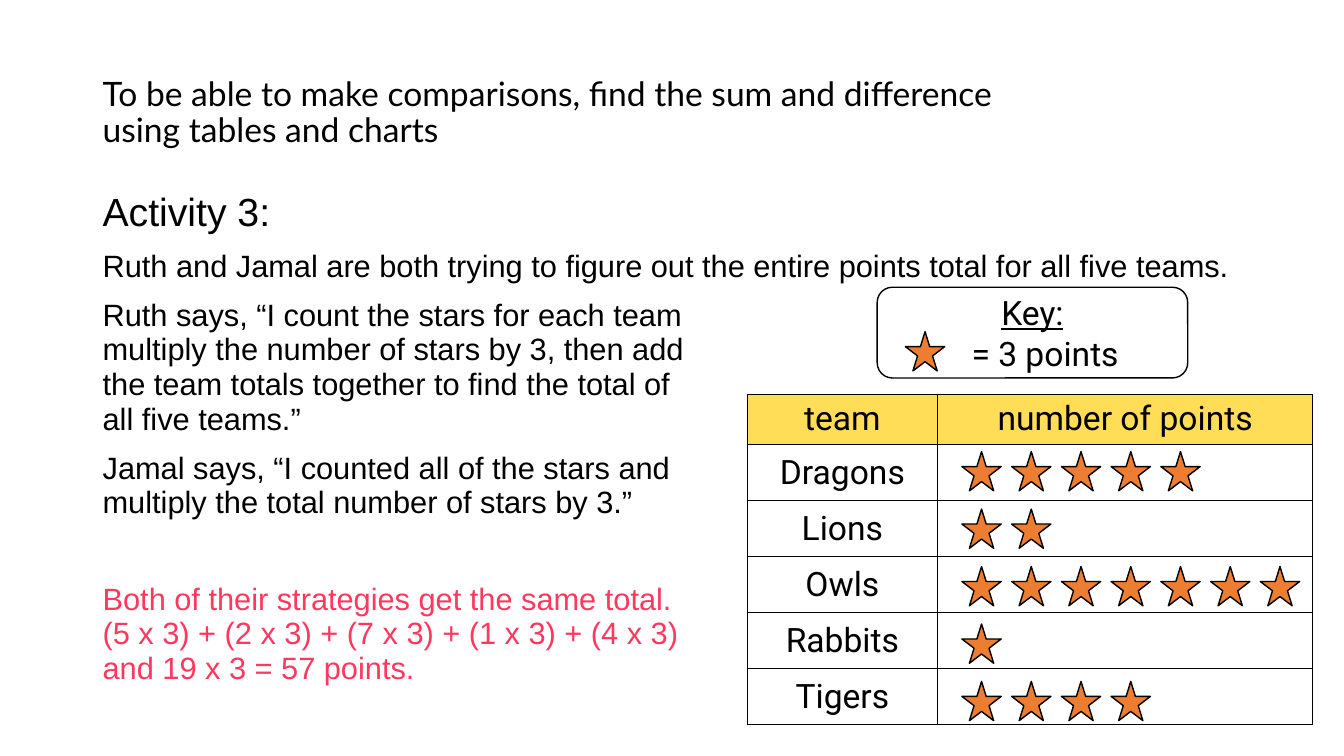
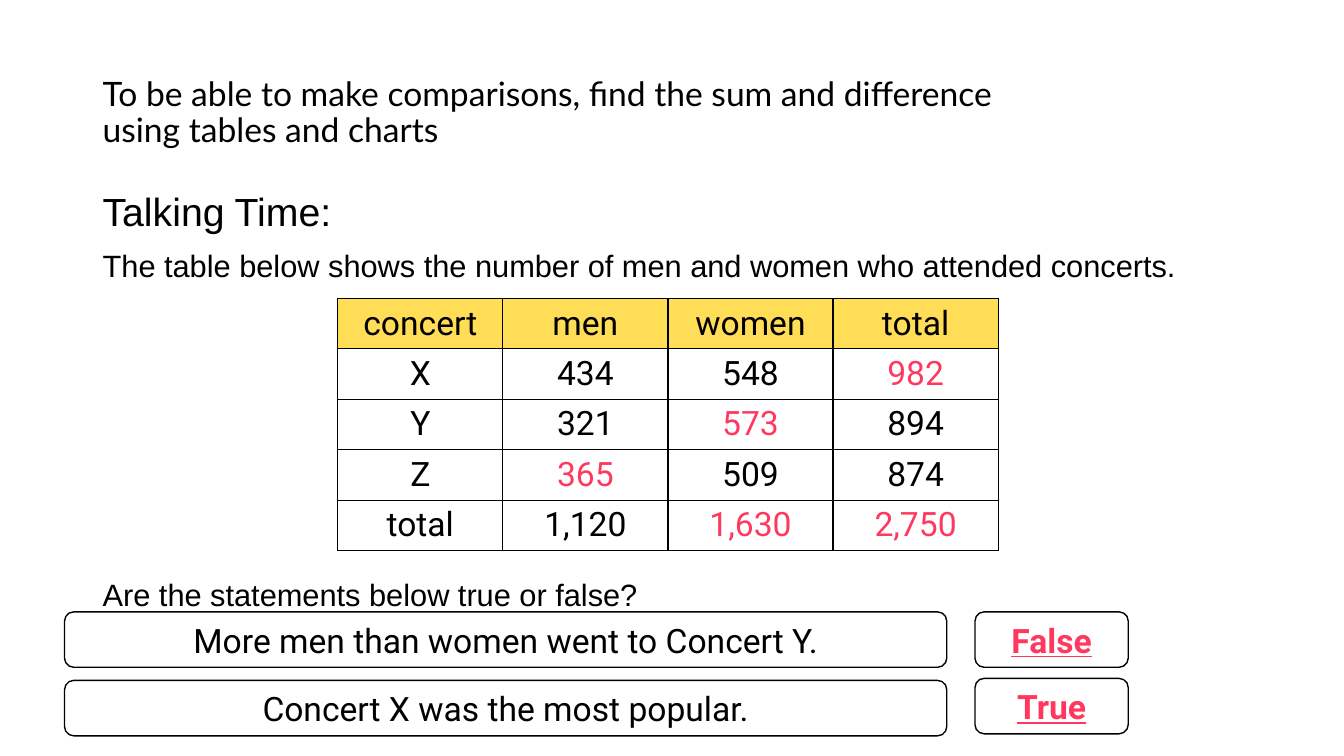
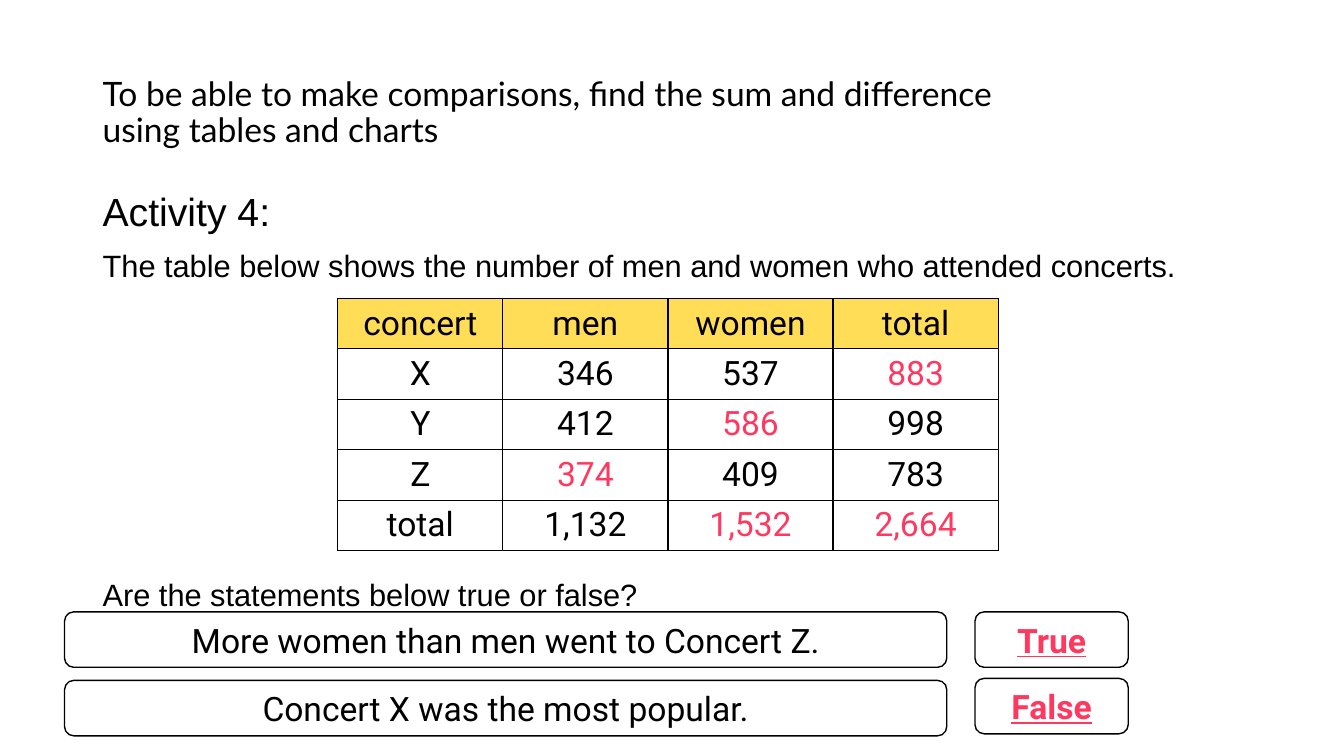
from dataclasses import dataclass

from lxml.etree import SubElement
from pptx import Presentation
from pptx.dml.color import RGBColor
from pptx.enum.shapes import MSO_SHAPE
from pptx.enum.text import MSO_ANCHOR, PP_ALIGN
from pptx.oxml.ns import qn
from pptx.util import Inches, Pt


@dataclass(frozen=True)
class Theme:
    """Colours, fonts and type sizes of the lesson."""
    black: str = "000000"
    white: str = "FFFFFF"
    header: str = "FFDD57"
    answer: str = "FF3860"
    star: str = "ED7D31"
    title_font: str = "Lato"
    body_font: str = "Arial"
    table_font: str = "Roboto"
    title_size: int = 24
    heading_size: int = 28
    body_size: int = 22
    table_size: int = 24
    title_spacing: float = 0.9
    body_spacing: float = 0.94
    paragraph_gap: int = 10
    section_gap: int = 44
    line_width: int = 1


@dataclass(frozen=True)
class Box:
    """A rectangle measured in inches."""
    left: float
    top: float
    width: float
    height: float

    def inside(self, left, top, width, height):
        """Return a box placed relative to this one."""
        return Box(self.left + left, self.top + top, width, height)

    def lengths(self):
        """Return left, top, width and height as lengths."""
        return [Inches(value) for value in (self.left, self.top, self.width, self.height)]


THEME = Theme()
OBJECTIVE = "To be able to make comparisons, find the sum and difference using tables and charts"
TITLE_BOX = Box(0.92, 0.4, 9.6, 1.45)
BODY_BOX = Box(0.92, 1.85, 12.27, 5.55)
PICTOGRAM_BOX = Box(7.41, 2.85, 5.61, 4.33)
CONCERT_BOX = Box(3.35, 2.96, 6.55, 2.47)
QUESTION_BOX = Box(0.92, 5.69, 12.27, 0.45)
STATEMENTS_BOX = Box(0.64, 6.07, 10.55, 1.23)
STAR_SIZE = 0.39
ANSWER_CELLS = {(1, 3), (2, 2), (3, 1), (4, 2), (4, 3)}


def add_run(paragraph, text, font, size, color=THEME.black, bold=False, underline=False):
    """Add one formatted run to a paragraph."""
    run = paragraph.add_run()
    run.text = text
    run.font.name = font
    run.font.size = Pt(size)
    run.font.color.rgb = RGBColor.from_string(color)
    run.font.bold = bold
    run.font.underline = underline


def add_text_box(slide, box, anchor=MSO_ANCHOR.TOP):
    """Add a wrapping text box and return its text frame."""
    frame = slide.shapes.add_textbox(*box.lengths()).text_frame
    frame.word_wrap = True
    frame.vertical_anchor = anchor
    return frame


def add_body(slide, box, heading, paragraphs):
    """Add a heading and paragraphs given as lines, colour and space before."""
    frame = add_text_box(slide, box)
    first = frame.paragraphs[0]
    first.line_spacing = THEME.body_spacing
    add_run(first, heading, THEME.body_font, THEME.heading_size)
    for lines, color, gap in paragraphs:
        paragraph = frame.add_paragraph()
        paragraph.line_spacing = THEME.body_spacing
        paragraph.space_before = Pt(gap)
        for index, line in enumerate(lines):
            if index:
                paragraph.add_line_break()
            add_run(paragraph, line, THEME.body_font, THEME.body_size, color)


def add_outlined_shape(slide, preset, box, color):
    """Add a filled preset shape with a black outline."""
    shape = slide.shapes.add_shape(preset, *box.lengths())
    shape.shadow.inherit = False
    shape.fill.solid()
    shape.fill.fore_color.rgb = RGBColor.from_string(color)
    shape.line.color.rgb = RGBColor.from_string(THEME.black)
    shape.line.width = Pt(THEME.line_width)
    return shape


def add_star(slide, box, left, top):
    """Add one star relative to a box."""
    add_outlined_shape(slide, MSO_SHAPE.STAR_5_POINT,
                       box.inside(left, top, STAR_SIZE, STAR_SIZE), THEME.star)


def add_card(slide, box):
    """Add a rounded white card and return its text frame."""
    frame = add_outlined_shape(slide, MSO_SHAPE.ROUNDED_RECTANGLE, box, THEME.white).text_frame
    frame.word_wrap = True
    frame.vertical_anchor = MSO_ANCHOR.MIDDLE
    frame.paragraphs[0].alignment = PP_ALIGN.CENTER
    return frame


def set_borders(cell):
    """Draw all four borders of a cell."""
    properties = cell._tc.get_or_add_tcPr()
    for side in ("a:lnL", "a:lnR", "a:lnT", "a:lnB"):
        border = SubElement(properties, qn(side), w=str(Pt(THEME.line_width)))
        fill = SubElement(border, qn("a:solidFill"))
        SubElement(fill, qn("a:srgbClr"), val=THEME.black)


def add_grid(slide, box, rows, widths, heights, answers=()):
    """Add a bordered table with a yellow header row."""
    table = slide.shapes.add_table(len(rows), len(widths), *box.lengths()).table
    for column, width in zip(table.columns, widths):
        column.width = Inches(width)
    for row_index, values in enumerate(rows):
        table.rows[row_index].height = Inches(heights[row_index])
        for column_index, value in enumerate(values):
            cell = table.cell(row_index, column_index)
            set_borders(cell)
            cell.fill.solid()
            cell.fill.fore_color.rgb = RGBColor.from_string(
                THEME.white if row_index else THEME.header)
            cell.vertical_anchor = MSO_ANCHOR.MIDDLE
            if value:
                paragraph = cell.text_frame.paragraphs[0]
                paragraph.alignment = PP_ALIGN.CENTER
                color = THEME.answer if (row_index, column_index) in answers else THEME.black
                add_run(paragraph, value, THEME.table_font, THEME.table_size, color)


def add_key(slide, box):
    """Add the key that gives the value of a star."""
    frame = add_card(slide, box)
    add_run(frame.paragraphs[0], "Key:", THEME.table_font, THEME.table_size, underline=True)
    value = frame.add_paragraph()
    value.alignment = PP_ALIGN.CENTER
    value._p.get_or_add_pPr().set("marL", str(Inches(0.25)))
    add_run(value, "= 3 points", THEME.table_font, THEME.table_size)
    add_star(slide, box, 0.28, 0.44)


def add_pictogram(slide, box, scores):
    """Add the key, the team table and a row of stars for each team."""
    header_height = 0.49
    table_box = box.inside(0, 1.06, box.width, box.height - 1.06)
    row_height = (table_box.height - header_height) / len(scores)
    rows = [("team", "number of points")] + [(team, "") for team in scores]
    add_grid(slide, table_box, rows, (1.89, 3.72),
             [header_height] + [row_height] * len(scores))
    add_key(slide, box.inside(1.29, 0, 3.08, 0.9))
    column_pitch = 2.96 / 6
    for row, count in enumerate(scores.values()):
        for column in range(count):
            add_star(slide, table_box, 2.13 + column * column_pitch, 0.57 + row * 0.57)


def add_statements(slide, box, statements):
    """Add statements with their true or false answers beside them."""
    for index, (statement, verdict) in enumerate(statements):
        card = add_card(slide, box.inside(0, index * 0.68, 8.75, 0.55))
        add_run(card.paragraphs[0], statement, THEME.table_font, THEME.table_size)
        answer = add_card(slide, box.inside(9.03, index * 0.66, 1.52, 0.55))
        add_run(answer.paragraphs[0], verdict, THEME.table_font, THEME.table_size,
                THEME.answer, bold=True, underline=True)


def add_lesson_slide(presentation):
    """Add a blank slide with the learning objective as its title."""
    slide = presentation.slides.add_slide(presentation.slide_layouts[6])
    paragraph = add_text_box(slide, TITLE_BOX, MSO_ANCHOR.MIDDLE).paragraphs[0]
    paragraph.line_spacing = THEME.title_spacing
    add_run(paragraph, OBJECTIVE, THEME.title_font, THEME.title_size)
    return slide


def add_team_slide(presentation):
    """Add the slide about the points of five teams."""
    slide = add_lesson_slide(presentation)
    gap = THEME.paragraph_gap
    add_body(slide, BODY_BOX, "Activity 3:", [
        (["Ruth and Jamal are both trying to figure out the entire points total "
          "for all five teams."], THEME.black, gap),
        (["Ruth says, “I count the stars for each team",
          "multiply the number of stars by 3, then add",
          "the team totals together to find the total of",
          "all five teams.”"], THEME.black, gap),
        (["Jamal says, “I counted all of the stars and",
          "multiply the total number of stars by 3.”"], THEME.black, gap),
        (["Both of their strategies get the same total.",
          "(5 x 3) + (2 x 3) + (7 x 3) + (1 x 3) + (4 x 3)",
          "and 19 x 3 = 57 points."], THEME.answer, THEME.section_gap),
    ])
    add_pictogram(slide, PICTOGRAM_BOX,
                  {"Dragons": 5, "Lions": 2, "Owls": 7, "Rabbits": 1, "Tigers": 4})


def add_concert_slide(presentation, heading, attendance, statements):
    """Add a slide with a concert table and statements to judge."""
    slide = add_lesson_slide(presentation)
    introduction = "The table below shows the number of men and women who attended concerts."
    add_body(slide, BODY_BOX, heading, [([introduction], THEME.black, THEME.paragraph_gap)])
    rows = [("concert", "men", "women", "total")] + attendance
    add_grid(slide, CONCERT_BOX, rows, [CONCERT_BOX.width / 4] * 4,
             [CONCERT_BOX.height / len(rows)] * len(rows), ANSWER_CELLS)
    question = add_text_box(slide, QUESTION_BOX).paragraphs[0]
    question.line_spacing = THEME.body_spacing
    add_run(question, "Are the statements below true or false?",
            THEME.body_font, THEME.body_size)
    add_statements(slide, STATEMENTS_BOX, statements)


def main():
    """Build and save the lesson."""
    presentation = Presentation()
    presentation.slide_width = Inches(13.33)
    presentation.slide_height = Inches(7.5)
    add_team_slide(presentation)
    add_concert_slide(
        presentation, "Talking Time:",
        [("X", "434", "548", "982"), ("Y", "321", "573", "894"),
         ("Z", "365", "509", "874"), ("total", "1,120", "1,630", "2,750")],
        [("More men than women went to Concert Y.", "False"),
         ("Concert X was the most popular.", "True")])
    add_concert_slide(
        presentation, "Activity 4:",
        [("X", "346", "537", "883"), ("Y", "412", "586", "998"),
         ("Z", "374", "409", "783"), ("total", "1,132", "1,532", "2,664")],
        [("More women than men went to Concert Z.", "True"),
         ("Concert X was the most popular.", "False")])
    presentation.save("out.pptx")


if __name__ == "__main__":
    main()
